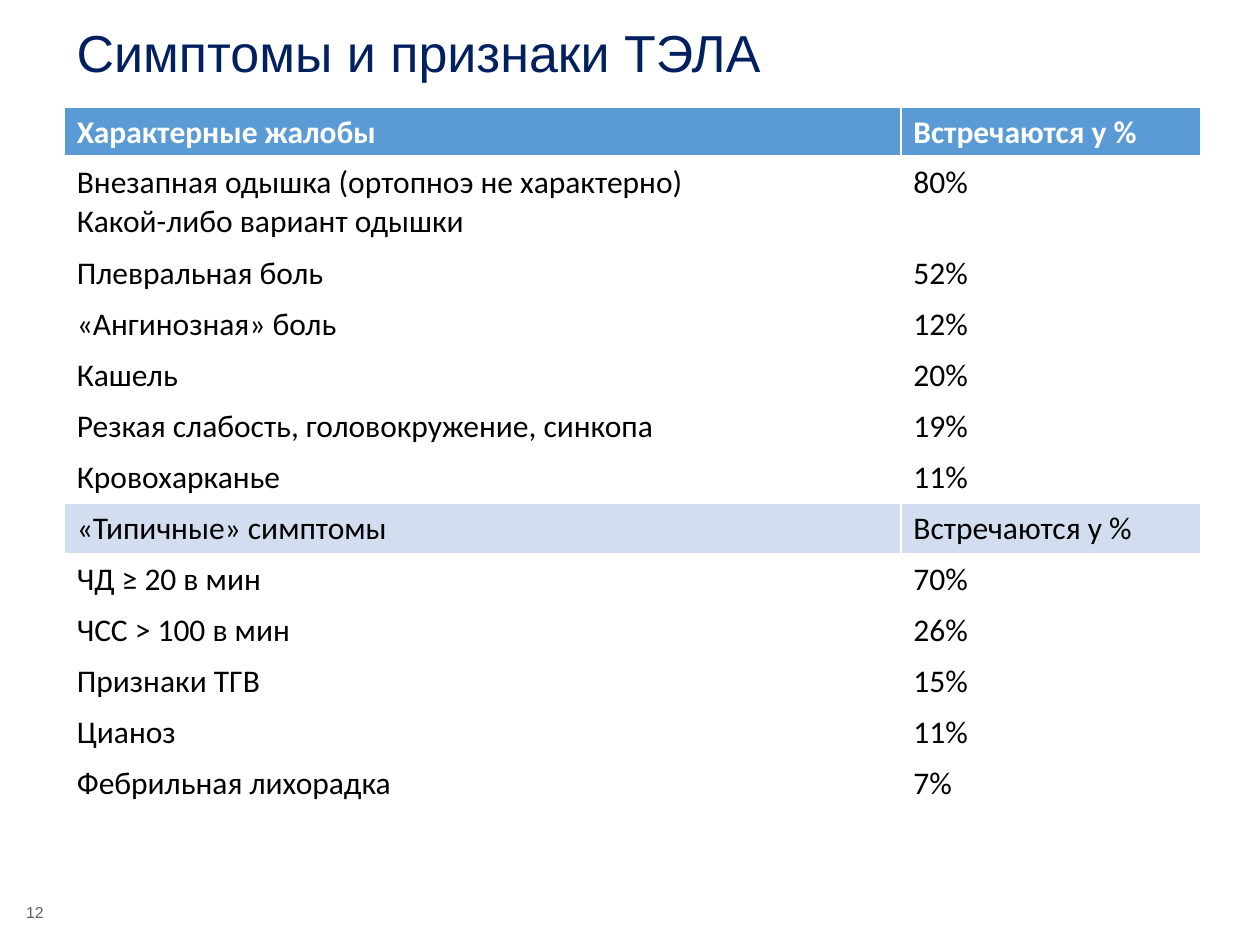
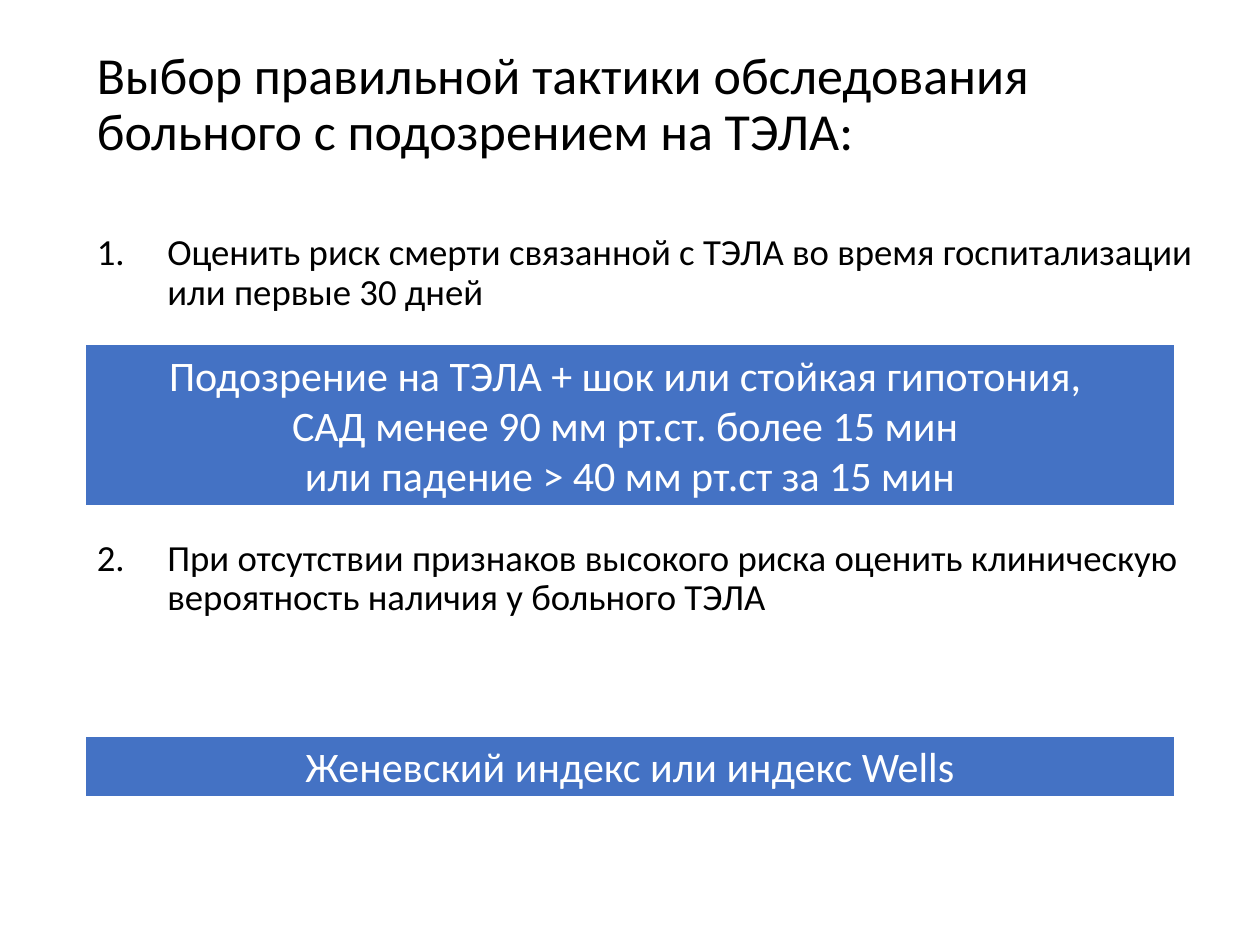
from dataclasses import dataclass

from lxml import etree
from pptx import Presentation
from pptx.dml.color import RGBColor
from pptx.enum.shapes import MSO_SHAPE
from pptx.enum.text import MSO_ANCHOR, PP_ALIGN
from pptx.oxml.ns import qn
from pptx.util import Inches, Pt

RECTANGLE = MSO_SHAPE.RECTANGLE
TOP, MIDDLE = MSO_ANCHOR.TOP, MSO_ANCHOR.MIDDLE
LEFT, CENTER = PP_ALIGN.LEFT, PP_ALIGN.CENTER

WHITE = RGBColor(0xFF, 0xFF, 0xFF)
BLACK = RGBColor(0x00, 0x00, 0x00)
NAVY = RGBColor(0x00, 0x20, 0x60)
GREY = RGBColor(0x5F, 0x5F, 0x5F)
HEADER_BLUE = RGBColor(0x5B, 0x9B, 0xD5)
SECTION_BLUE = RGBColor(0xD2, 0xDE, 0xEF)
CALLOUT_BLUE = RGBColor(0x44, 0x72, 0xC4)

CONTENT_WIDTH = 9.02
TITLE_SIZE = 29.7
TIGHT_LINES = 0.9
ROW_HEIGHT, HEADER_HEIGHT, TWO_LINE_HEIGHT = 0.405, 0.39, 0.72


@dataclass(frozen=True)
class Box:
    left: float
    top: float
    width: float
    height: float

    def lengths(self) -> tuple:
        return tuple(map(Inches, (self.left, self.top, self.width, self.height)))


@dataclass(frozen=True)
class TextStyle:
    size: float
    color: RGBColor = BLACK
    font: str = "Calibri"
    bold: bool = False
    align: int = LEFT
    line_spacing: float = 1.0


@dataclass(frozen=True)
class Callout:
    box: Box
    lines: tuple


@dataclass(frozen=True)
class SymptomRow:
    sign: str
    share: str
    fill: RGBColor | None = None


TABLE_TEXT = TextStyle(18)
TABLE_HEADER_TEXT = TextStyle(18, WHITE, bold=True)
STEP_TEXT = TextStyle(21, line_spacing=TIGHT_LINES)
CALLOUT_TEXT = TextStyle(24, WHITE, align=CENTER)
PAGE_NUMBER_TEXT = TextStyle(9, GREY, "Arial")

SHARE_HEADING = "Встречаются у %"
SYMPTOMS = (
    SymptomRow("Характерные жалобы", SHARE_HEADING, HEADER_BLUE),
    SymptomRow("Внезапная одышка (ортопноэ не характерно)\nКакой-либо вариант одышки", "80%"),
    SymptomRow("Плевральная боль", "52%"),
    SymptomRow("«Ангинозная» боль", "12%"),
    SymptomRow("Кашель", "20%"),
    SymptomRow("Резкая слабость, головокружение, синкопа", "19%"),
    SymptomRow("Кровохарканье", "11%"),
    SymptomRow("«Типичные» симптомы", SHARE_HEADING, SECTION_BLUE),
    SymptomRow("ЧД ≥ 20 в мин", "70%"),
    SymptomRow("ЧСС > 100 в мин", "26%"),
    SymptomRow("Признаки ТГВ", "15%"),
    SymptomRow("Цианоз", "11%"),
    SymptomRow("Фебрильная лихорадка", "7%"),
)

# Each step with the space above it, in points
STEPS = (
    ("Оценить риск смерти связанной с ТЭЛА во время госпитализации или первые 30 дней", 7.5),
    ("При отсутствии признаков высокого риска оценить клиническую вероятность "
     "наличия у больного ТЭЛА", 129),
)
CALLOUTS = (
    Callout(Box(0.67, 2.73, 8.66, 1.29), (
        "Подозрение на ТЭЛА + шок или стойкая гипотония, ",
        "САД менее 90 мм рт.ст. более 15 мин ",
        "или падение > 40 мм рт.ст за 15 мин",
    )),
    Callout(Box(0.67, 5.84, 8.66, 0.49), ("Женевский индекс или индекс Wells",)),
)


def set_attributes(target, values: dict) -> None:
    for name, value in values.items():
        setattr(target, name, value)


def write_lines(frame, lines, style: TextStyle) -> None:
    """Write one paragraph for each line, all in the same style."""
    for index, line in enumerate(lines):
        paragraph = frame.add_paragraph() if index else frame.paragraphs[0]
        set_attributes(paragraph, {"alignment": style.align,
                                   "line_spacing": style.line_spacing})
        run = paragraph.add_run()
        run.text = line
        set_attributes(run.font, {"name": style.font, "size": Pt(style.size),
                                  "bold": style.bold})
        run.font.color.rgb = style.color


def add_text(slide, box: Box, lines, style: TextStyle, anchor=MIDDLE):
    frame = slide.shapes.add_textbox(*box.lengths()).text_frame
    set_attributes(frame, {"word_wrap": True, "vertical_anchor": anchor})
    write_lines(frame, lines, style)
    return frame


def add_title(slide, box: Box, title: str, color: RGBColor, font: str) -> None:
    style = TextStyle(TITLE_SIZE, color, font, line_spacing=TIGHT_LINES)
    add_text(slide, box, (title,), style)


def add_callout(slide, callout: Callout) -> None:
    band = slide.shapes.add_shape(RECTANGLE, *callout.box.lengths())
    band.shadow.inherit = False
    band.fill.solid()
    band.fill.fore_color.rgb = CALLOUT_BLUE
    band.line.color.rgb = WHITE
    band.line.width = Pt(1.5)
    set_attributes(band.text_frame, {
        "word_wrap": True, "vertical_anchor": TOP,
        "margin_left": Inches(0.08), "margin_right": Inches(0.08),
        "margin_top": Inches(0.04), "margin_bottom": Inches(0.04),
    })
    write_lines(band.text_frame, callout.lines, CALLOUT_TEXT)


def set_borders(cell, bottom_width: float) -> None:
    """Draw white cell borders, the lower one in its own width."""
    properties = cell._tc.get_or_add_tcPr()
    for side, width in (("L", 1), ("R", 1), ("T", 1), ("B", bottom_width)):
        border = etree.SubElement(properties, qn(f"a:ln{side}"), w=str(Pt(width)))
        fill = etree.SubElement(border, qn("a:solidFill"))
        etree.SubElement(fill, qn("a:srgbClr"), val=str(WHITE))


def add_symptom_table(slide, box: Box, rows) -> None:
    table = slide.shapes.add_table(len(rows), 2, *box.lengths()).table
    set_attributes(table, {"first_row": False, "horz_banding": False})
    for column, width in zip(table.columns, (6.64, 2.38)):
        column.width = Inches(width)
    for index, symptom in enumerate(rows):
        is_header = index == 0
        height = TWO_LINE_HEIGHT if "\n" in symptom.sign else ROW_HEIGHT
        table.rows[index].height = Inches(HEADER_HEIGHT if is_header else height)
        for cell, text in zip(table.rows[index].cells, (symptom.sign, symptom.share)):
            set_borders(cell, 3 if is_header else 1)
            if symptom.fill is None:
                cell.fill.background()
            else:
                cell.fill.solid()
                cell.fill.fore_color.rgb = symptom.fill
            write_lines(cell.text_frame, text.split("\n"),
                        TABLE_HEADER_TEXT if is_header else TABLE_TEXT)


def add_numbered_steps(slide, box: Box, steps) -> None:
    frame = add_text(slide, box, [text for text, _ in steps], STEP_TEXT, TOP)
    indent = Inches(0.56)
    for paragraph, (_, space_above) in zip(frame.paragraphs, steps):
        paragraph.space_before = Pt(space_above)
        properties = paragraph._p.get_or_add_pPr()
        properties.set("marL", str(indent))
        properties.set("indent", str(-indent))
        etree.SubElement(properties, qn("a:buFont"), typeface="+mj-lt")
        etree.SubElement(properties, qn("a:buAutoNum"), type="arabicPeriod")


def main() -> None:
    deck = Presentation()
    deck.slide_width, deck.slide_height = Inches(10), Inches(7.5)
    blank = deck.slide_layouts[6]

    # Symptoms and signs
    symptoms = deck.slides.add_slide(blank)
    add_title(symptoms, Box(0.51, 0.19, CONTENT_WIDTH, 0.51),
              "Симптомы и признаки ТЭЛА", NAVY, "Arial")
    add_symptom_table(symptoms, Box(0.51, 0.85, CONTENT_WIDTH, 5.57), SYMPTOMS)
    add_text(symptoms, Box(0.11, 7.14, 0.4, 0.2), ("12",), PAGE_NUMBER_TEXT)

    # Choice of examination tactics
    tactics = deck.slides.add_slide(blank)
    add_title(tactics, Box(0.67, 0.33, CONTENT_WIDTH, 1.02),
              "Выбор правильной тактики обследования больного с подозрением на ТЭЛА:",
              BLACK, "Calibri")
    add_numbered_steps(tactics, Box(0.67, 1.81, CONTENT_WIDTH, 4.64), STEPS)
    for callout in CALLOUTS:
        add_callout(tactics, callout)

    deck.save("out.pptx")


if __name__ == "__main__":
    main()
